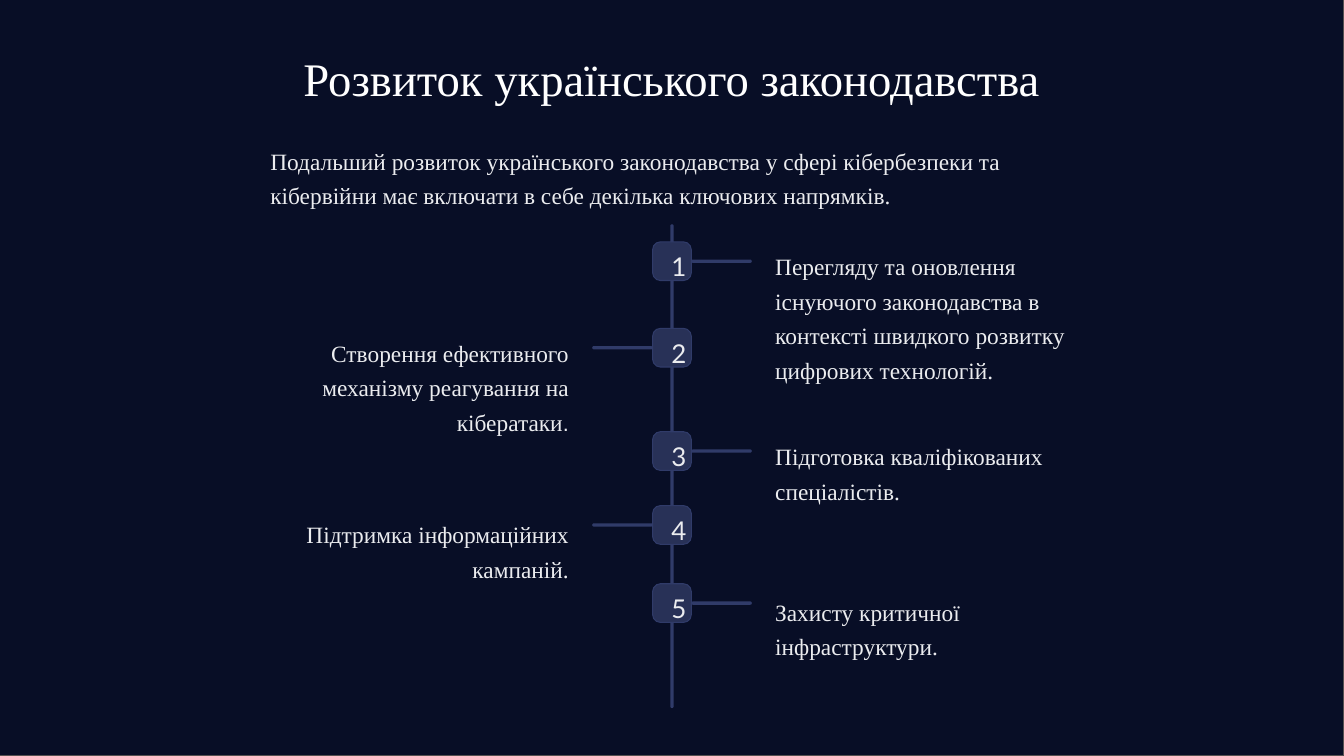
import dataclasses

import pptx
import pptx.dml.color
import pptx.enum.shapes
import pptx.enum.text
import pptx.util

Inches = pptx.util.Inches
Pt = pptx.util.Pt
Shapes = pptx.enum.shapes.MSO_SHAPE
Align = pptx.enum.text.PP_ALIGN


@dataclasses.dataclass(frozen=True)
class Theme:
    backdrop: str = "080E26"
    backdrop_edge: str = "565151"
    rail: str = "303B69"
    badge: str = "283157"
    title: str = "FFFFFF"
    body: str = "EBECEF"
    text_font: str = "Times New Roman"
    number_font: str = "Lato"
    mark_font: str = "Arial"
    title_size: float = 40
    body_size: float = 20
    number_size: float = 22.2
    mark_size: float = 18.5
    title_leading: float = 46.3
    body_leading: float = 29.6
    number_leading: float = 27.8
    edge_width: float = 0.92


class TimelinePage:
    center = 8
    badge_size = 0.46
    rail_width = 0.04
    branch_length = 0.72

    def __init__(self, page, theme):
        self.page = page
        self.theme = theme

    def block(self, left, top, width, height, fill, edge=None, rounding=None):
        kind = Shapes.RECTANGLE if rounding is None else Shapes.ROUNDED_RECTANGLE
        box = self.page.shapes.add_shape(
            kind, Inches(left), Inches(top), Inches(width), Inches(height))
        box.shadow.inherit = False
        if rounding is not None:
            box.adjustments[0] = rounding
        box.fill.solid()
        box.fill.fore_color.rgb = pptx.dml.color.RGBColor.from_string(fill)
        if edge:
            box.line.color.rgb = pptx.dml.color.RGBColor.from_string(edge)
            box.line.width = Pt(self.theme.edge_width)
        else:
            box.line.fill.background()

    def rail(self, left, top, width, height):
        self.block(left, top, width, height, self.theme.rail, rounding=0.5)

    def text(self, left, top, width, height, spans, leading, align=Align.LEFT, wrap=True):
        box = self.page.shapes.add_textbox(
            Inches(left), Inches(top), Inches(width), Inches(height))
        box.text_frame.word_wrap = wrap
        para = box.text_frame.paragraphs[0]
        para.alignment = align
        para.line_spacing = Pt(leading)
        for words, font, size, color in spans:
            span = para.add_run()
            span.text = words
            span.font.name = font
            span.font.size = Pt(size)
            span.font.color.rgb = pptx.dml.color.RGBColor.from_string(color)

    def title(self, words):
        theme = self.theme
        spans = [(words, theme.text_font, theme.title_size, theme.title)]
        self.text(3.21, 0.57, 9.57, 0.64, spans, theme.title_leading, Align.CENTER, False)

    def body(self, left, top, width, height, words, align=Align.LEFT, mark=""):
        theme = self.theme
        spans = [(words, theme.text_font, theme.body_size, theme.body)]
        if mark:
            spans.append((mark, theme.mark_font, theme.mark_size, theme.body))
        self.text(left, top, width, height, spans, theme.body_leading, align)

    def badge(self, number, top):
        theme = self.theme
        self.block(self.center - self.badge_size / 2, top, self.badge_size,
                   self.badge_size, theme.badge, theme.rail, 0.2)
        spans = [(str(number), theme.number_font, theme.number_size, theme.body)]
        self.text(self.center - 0.09, top + 0.04, 0.18, 0.39, spans,
                  theme.number_leading, Align.CENTER, False)

    def step(self, number, top, text_top, text_height, words, mark=""):
        on_right = number % 2 == 1
        reach = self.badge_size / 2
        branch_left = self.center + (reach if on_right else -reach - self.branch_length)
        self.rail(branch_left, top + 0.21, self.branch_length, self.rail_width)
        self.badge(number, top)
        self.body(9.13 if on_right else 3.12, text_top, 3.75, text_height, words,
                  Align.LEFT if on_right else Align.RIGHT, mark)


STEPS = [
    (2.88, 2.88, 1.64, "Перегляду та оновлення існуючого законодавства в "
                       "контексті швидкого розвитку цифрових технологій."),
    (3.91, 3.91, 1.23, "Створення ефективного механізму реагування на кібератаки", "."),
    (5.14, 5.14, 0.82, "Підготовка кваліфікованих спеціалістів."),
    (6.02, 6.07, 0.64, "Підтримка інформаційних кампаній."),
    (6.95, 6.99, 0.64, "Захисту критичної інфраструктури."),
]


def main():
    deck = pptx.Presentation()
    deck.slide_width = Inches(16)
    deck.slide_height = Inches(9)
    theme = Theme()
    timeline = TimelinePage(deck.slides.add_slide(deck.slide_layouts[6]), theme)
    timeline.block(0, 0, 16, 9, theme.backdrop, theme.backdrop_edge)
    timeline.title("Розвиток українського законодавства")
    timeline.body(3.12, 1.62, 9.77, 0.82,
                  "Подальший розвиток українського законодавства у сфері кібербезпеки "
                  "та кібервійни має включати в себе декілька ключових напрямків.")
    timeline.rail(7.98, 2.67, timeline.rail_width, 5.76)
    for number, step in enumerate(STEPS, start=1):
        timeline.step(number, *step)
    deck.save("out.pptx")


if __name__ == "__main__":
    main()
